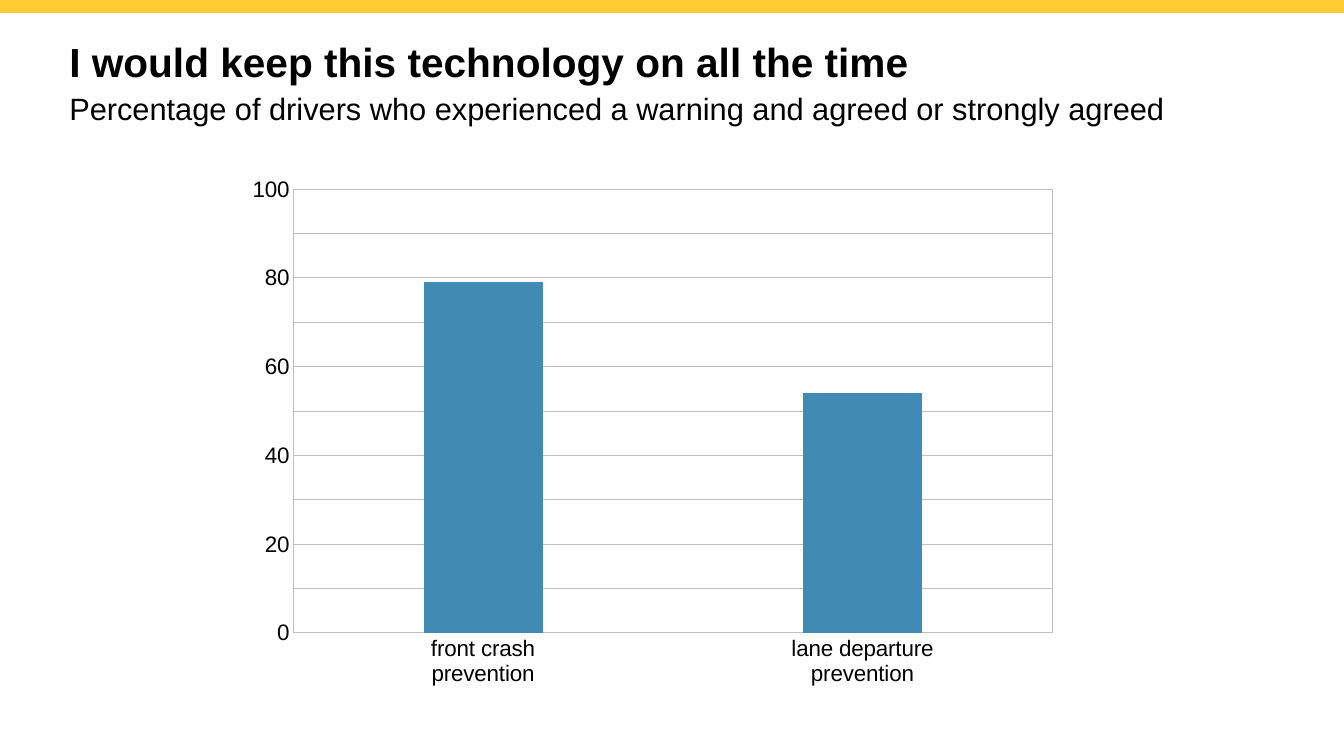
from lxml import etree
from pptx import Presentation
from pptx.chart import data as cd
from pptx.dml.color import RGBColor
from pptx.enum import chart as ce, shapes, text
from pptx.oxml import parse_xml
from pptx.oxml.ns import nsdecls, qn
from pptx.util import Pt

GOLD = RGBColor(0xFF, 0xCC, 0x33)
BLUE = RGBColor(0x41, 0x8A, 0xB3)
GRAY = RGBColor(0xBF, 0xBF, 0xBF)
BLACK = RGBColor(0, 0, 0)
WIDE, HIGH = 960, 540


class Deck:
    face = "Arial"
    thin = Pt(0.75)

    def __init__(self):
        self.prs = Presentation()
        self.prs.slide_width, self.prs.slide_height = Pt(WIDE), Pt(HIGH)
        self.slide = self.prs.slides.add_slide(self.prs.slide_layouts[1])

    def style(self, font, size, bold=False):
        font.name, font.size, font.bold = self.face, Pt(size), bold
        font.color.rgb = BLACK

    def line(self, fmt):
        fmt.line.color.rgb = GRAY
        fmt.line.width = self.thin

    def edge(self, node):
        """Give a chart element without a format object a thin gray line."""
        node.append(parse_xml(
            f'<c:spPr {nsdecls("c", "a")}><a:noFill/>'
            f'<a:ln w="{int(self.thin)}"><a:solidFill><a:srgbClr val="{GRAY}"/>'
            '</a:solidFill></a:ln></c:spPr>'))

    def bar(self, x, y, w, h, color):
        box = self.slide.shapes.add_shape(
            shapes.MSO_SHAPE.RECTANGLE, Pt(x), Pt(y), Pt(w), Pt(h))
        box.shadow.inherit = False
        box.fill.solid()
        box.fill.fore_color.rgb = color
        box.line.fill.background()

    def words(self, idx, copy, x, y, w, h, size, lead, bold=False):
        """Fill a placeholder with one plain, left-aligned line."""
        box = self.slide.placeholders[idx]
        box.left, box.top, box.width, box.height = Pt(x), Pt(y), Pt(w), Pt(h)
        frame = box.text_frame
        frame.text = copy
        frame.word_wrap = True
        frame.auto_size = text.MSO_AUTO_SIZE.NONE
        frame.vertical_anchor = text.MSO_ANCHOR.TOP
        frame.margin_left = frame.margin_right = 0
        frame.margin_top = frame.margin_bottom = 0
        para = frame.paragraphs[0]
        para.alignment = text.PP_ALIGN.LEFT
        para.line_spacing = Pt(lead)
        para.space_before = Pt(0)
        props = para._p.get_or_add_pPr()
        props.set("marL", "0")
        props.set("indent", "0")
        etree.SubElement(props, qn("a:buNone"))
        self.style(para.runs[0].font, size, bold)

    def columns(self, cats, vals, x, y, w, h, plot):
        data = cd.CategoryChartData(number_format="#,##0")
        data.categories = cats
        data.add_series("Series 1", vals)
        chart = self.slide.shapes.add_chart(
            ce.XL_CHART_TYPE.COLUMN_CLUSTERED,
            Pt(x), Pt(y), Pt(w), Pt(h), data).chart
        chart.has_legend = chart.has_title = False
        self.style(chart.font, 10)

        group = chart.plots[0]
        group.gap_width, group.overlap = 219, -27
        group.vary_by_categories = False
        fill = group.series[0].format.fill
        fill.solid()
        fill.fore_color.rgb = BLUE

        for axis in (chart.category_axis, chart.value_axis):
            axis.major_tick_mark = axis.minor_tick_mark = ce.XL_TICK_MARK.NONE
            self.style(axis.tick_labels.font, 16)
        self.line(chart.category_axis.format)
        scale = chart.value_axis
        scale.format.line.fill.background()
        scale.minimum_scale, scale.maximum_scale = 0, 100
        scale.major_unit, scale.minor_unit = 20, 10
        scale.has_major_gridlines = scale.has_minor_gridlines = True
        self.line(scale.major_gridlines.format)
        scale.tick_labels.number_format = "#,##0"
        scale.tick_labels.number_format_is_linked = False
        self.frame(chart, plot)

    def frame(self, chart, plot):
        """Place the inner plot area by fractions; line it and its minor grid."""
        area = chart._chartSpace.find(".//" + qn("c:plotArea"))
        for old in area.findall(qn("c:layout")):
            area.remove(old)
        spots = "".join(f'<c:{k} val="{v}"/>' for k, v in zip("xywh", plot))
        area.insert(0, parse_xml(
            f'<c:layout {nsdecls("c")}><c:manualLayout>'
            '<c:layoutTarget val="inner"/>'
            '<c:xMode val="edge"/><c:yMode val="edge"/>'
            f'{spots}</c:manualLayout></c:layout>'))
        self.edge(area)
        self.edge(area.find(".//" + qn("c:minorGridlines")))


def main():
    deck = Deck()
    deck.bar(0, 0, WIDE, 9.2, GOLD)
    deck.columns(
        ["front crash\nprevention", "lane departure\nprevention"], [79, 54],
        94.3, 115.2, 720, 425.5, (0.16, 0.047, 0.753, 0.745))
    deck.words(0, "I would keep this technology on all the time",
               49.5, 30, 885, 31, 29, 31, True)
    deck.words(1, "Percentage of drivers who experienced a warning "
               "and agreed or strongly agreed",
               49.5, 65.5, 814.5, 25, 22, 25)
    deck.prs.save("out.pptx")


if __name__ == "__main__":
    main()
